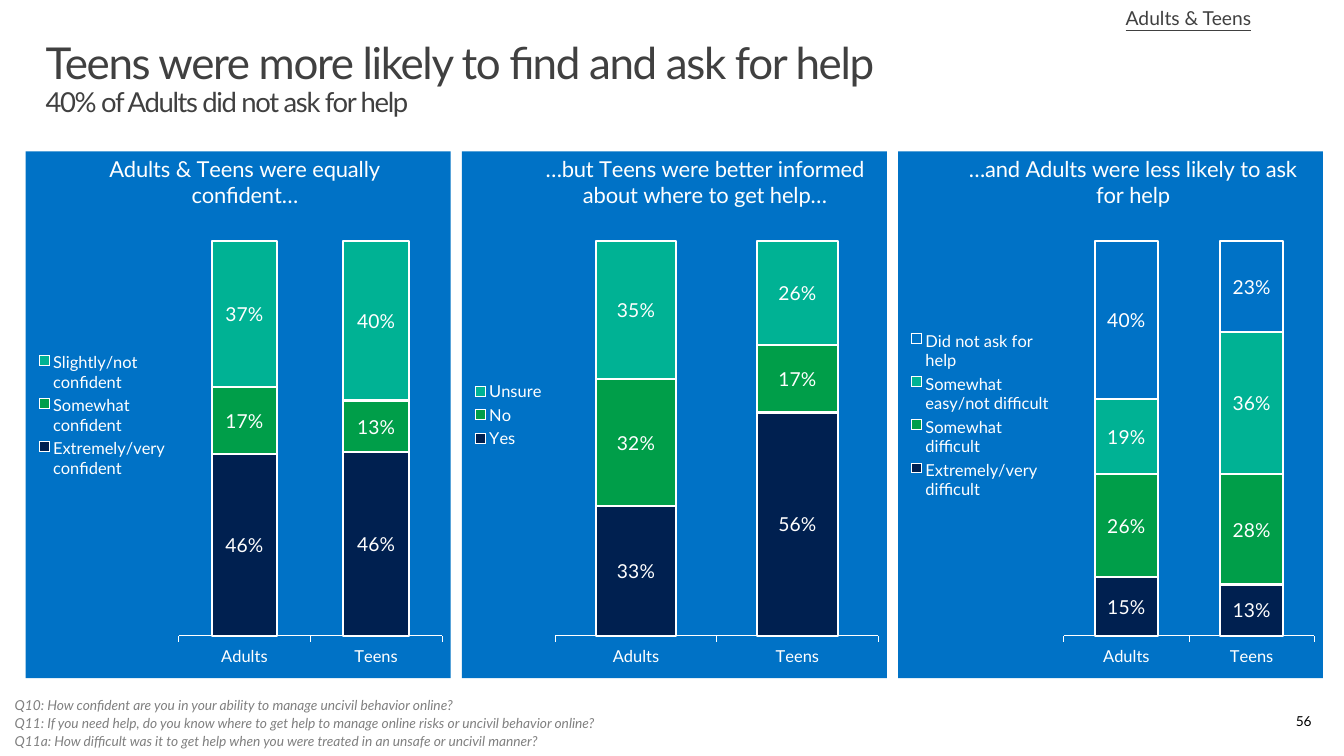
from pptx import Presentation
from pptx.chart.data import CategoryChartData
from pptx.dml.color import RGBColor
from pptx.enum.chart import XL_CHART_TYPE as ChartType, XL_LABEL_POSITION as LabelPosition
from pptx.enum.chart import XL_LEGEND_POSITION as LegendPosition, XL_TICK_MARK as TickMark
from pptx.enum.text import MSO_ANCHOR as Anchor, MSO_AUTO_SIZE as AutoSize, PP_ALIGN as Align
from pptx.oxml import parse_xml
from pptx.oxml.ns import nsdecls, qn
from pptx.util import Cm, Pt

WHITE = RGBColor(0xFF, 0xFF, 0xFF)
BLACK = RGBColor(0x00, 0x00, 0x00)
DARK_GRAY = RGBColor(0x40, 0x40, 0x40)
GRAY = RGBColor(0x80, 0x80, 0x80)
BLUE = RGBColor(0x00, 0x72, 0xC6)
NAVY = RGBColor(0x00, 0x20, 0x50)
GREEN = RGBColor(0x00, 0x9E, 0x49)
TEAL = RGBColor(0x00, 0xB2, 0x94)
SERIES_COLORS = [NAVY, GREEN, TEAL, BLUE]


def style_font(font, size, color, **values):
    for name, value in {"name": "Lato", "size": Pt(size), "bold": False, **values}.items():
        setattr(font, name, value)
    font.color.rgb = color


def place(element, index, inner, **fractions):
    for layout in element.findall(qn("c:layout")):
        element.remove(layout)
    target = '<c:layoutTarget val="inner"/>' if inner else ""
    modes = "".join(f'<c:{key}Mode val="edge"/>' for key in fractions if key in "xy")
    sizes = "".join(f'<c:{key} val="{value}"/>' for key, value in fractions.items())
    element.insert(index, parse_xml(
        f'<c:layout {nsdecls("c")}><c:manualLayout>{target}{modes}{sizes}'
        "</c:manualLayout></c:layout>"))


presentation = Presentation()
presentation.slide_width = Cm(34.54)
presentation.slide_height = Cm(19.43)
slide = presentation.slides.add_slide(presentation.slide_layouts[5])

title = slide.shapes.title
title_box = {"left": Cm(0.76), "top": Cm(0.81), "width": Cm(33.02), "height": Cm(2.54)}
for name, value in title_box.items():
    setattr(title, name, value)
title_format = {
    "margin_left": Cm(0.41), "margin_right": Cm(0.41),
    "margin_top": Cm(0.25), "margin_bottom": Cm(0.25),
    "vertical_anchor": Anchor.TOP, "word_wrap": True, "auto_size": AutoSize.NONE,
}
for name, value in title_format.items():
    setattr(title.text_frame, name, value)
paragraph = title.text_frame.paragraphs[0]
paragraph.alignment = Align.LEFT
paragraph.line_spacing = 0.9
title_lines = [
    ("Teens were more likely to find and ask for help", 32),
    ("40% of Adults did not ask for help", 20),
]
for number, (text, size) in enumerate(title_lines):
    if number:
        paragraph.add_line_break()
    run = paragraph.add_run()
    run.text = text
    style_font(run.font, size, DARK_GRAY)
    run.font._element.set("spc", "-100")

panels = [
    {
        "title": ["Adults & Teens were equally", "confident…"],
        "series": {
            "Extremely/very confident": (0.46, 0.46),
            "Somewhat confident": (0.17, 0.13),
            "Slightly/not confident": (0.37, 0.40),
        },
        "title_left": 0.19, "plot_left": 0.36, "plot_width": 0.62,
    },
    {
        "title": ["…but Teens were better informed", "about where to get help…"],
        "series": {"Yes": (0.33, 0.56), "No": (0.32, 0.17), "Unsure": (0.35, 0.26)},
        "title_left": 0.19, "plot_left": 0.22, "plot_width": 0.76,
    },
    {
        "title": ["…and Adults were less likely to ask", "for help"],
        "series": {
            "Extremely/very difficult": (0.15, 0.13),
            "Somewhat difficult": (0.26, 0.28),
            "Somewhat easy/not difficult": (0.19, 0.36),
            "Did not ask for help": (0.40, 0.23),
        },
        "title_left": 0.16, "plot_left": 0.39, "plot_width": 0.59,
    },
]
for column, panel in enumerate(panels):
    chart_data = CategoryChartData(number_format="0%")
    chart_data.categories = ["Adults", "Teens"]
    for name, values in panel["series"].items():
        chart_data.add_series(name, values)
    chart = slide.shapes.add_chart(
        ChartType.COLUMN_STACKED_100, Cm(0.66 + 11.21 * column), Cm(3.89),
        Cm(10.92), Cm(13.54), chart_data).chart
    style_font(chart.font, 10, WHITE)
    chart._chartSpace.find(qn("c:txPr")).addprevious(parse_xml(
        f'<c:spPr {nsdecls("c", "a")}><a:solidFill><a:srgbClr val="{BLUE}"/></a:solidFill>'
        "<a:ln><a:noFill/></a:ln></c:spPr>"))

    chart.has_title = True
    title_frame = chart.chart_title.text_frame
    title_frame.text = "\n".join(panel["title"])
    for paragraph in title_frame.paragraphs:
        paragraph.alignment = Align.CENTER
        style_font(paragraph.runs[0].font, 16, WHITE)
    place(chart.chart_title._element, 1, False, x=panel["title_left"], y=0)

    chart.has_legend = True
    chart.legend.position = LegendPosition.LEFT
    chart.legend.include_in_layout = False
    style_font(chart.legend.font, 12, WHITE)
    place(chart._chartSpace.chart.plotArea, 0, True,
          x=panel["plot_left"], y=0.17, w=panel["plot_width"], h=0.75)

    category_axis = chart.category_axis
    category_axis.major_tick_mark = TickMark.OUTSIDE
    category_axis.format.line.color.rgb = WHITE
    category_axis.format.line.width = Pt(0.75)
    style_font(category_axis.tick_labels.font, 12, WHITE)
    value_axis_format = {"minimum_scale": 0, "maximum_scale": 1,
                         "has_major_gridlines": False, "visible": False}
    for name, value in value_axis_format.items():
        setattr(chart.value_axis, name, value)

    plot = chart.plots[0]
    plot.gap_width = 100
    plot.overlap = 100
    plot.vary_by_categories = False
    for series, color in zip(plot.series, SERIES_COLORS):
        series.format.fill.solid()
        series.format.fill.fore_color.rgb = color
        series.format.line.color.rgb = WHITE
        series.format.line.width = Pt(1.5)
        label_format = {"show_value": True, "number_format": "0%",
                        "number_format_is_linked": False, "position": LabelPosition.CENTER}
        for name, value in label_format.items():
            setattr(series.data_labels, name, value)
        style_font(series.data_labels.font, 14, WHITE)

questions = [
    "Q10: How confident are you in your ability to manage uncivil behavior online?",
    "Q11: If you need help, do you know where to get help to manage online risks or uncivil behavior online?",
    "Q11a: How difficult was it to get help when you were treated in an unsafe or uncivil manner?",
]
text_boxes = [
    {"lines": questions, "box": (0.13, 17.75, 28, 1.6), "size": 10, "color": GRAY,
     "font": {"italic": True}, "paragraph": {"line_spacing": Pt(13)},
     "frame": {"word_wrap": True}},
    {"lines": ["56"], "box": (25.91, 18.01, 8.05, 1.04), "size": 10, "color": BLACK,
     "font": {}, "paragraph": {"alignment": Align.RIGHT},
     "frame": {"word_wrap": True, "vertical_anchor": Anchor.MIDDLE}},
    {"lines": ["Adults & Teens"], "box": (28.42, 0, 4.47, 1.32), "size": 14, "color": DARK_GRAY,
     "font": {"underline": True}, "paragraph": {"line_spacing": 0.9},
     "frame": {"word_wrap": False, "margin_left": Cm(0.51), "margin_right": Cm(0.51),
               "margin_top": Cm(0.31), "margin_bottom": Cm(0.41)}},
]
for entry in text_boxes:
    text_frame = slide.shapes.add_textbox(*map(Cm, entry["box"])).text_frame
    text_frame.text = "\n".join(entry["lines"])
    for name, value in entry["frame"].items():
        setattr(text_frame, name, value)
    for paragraph in text_frame.paragraphs:
        for name, value in entry["paragraph"].items():
            setattr(paragraph, name, value)
        style_font(paragraph.runs[0].font, entry["size"], entry["color"], **entry["font"])

presentation.save("out.pptx")
